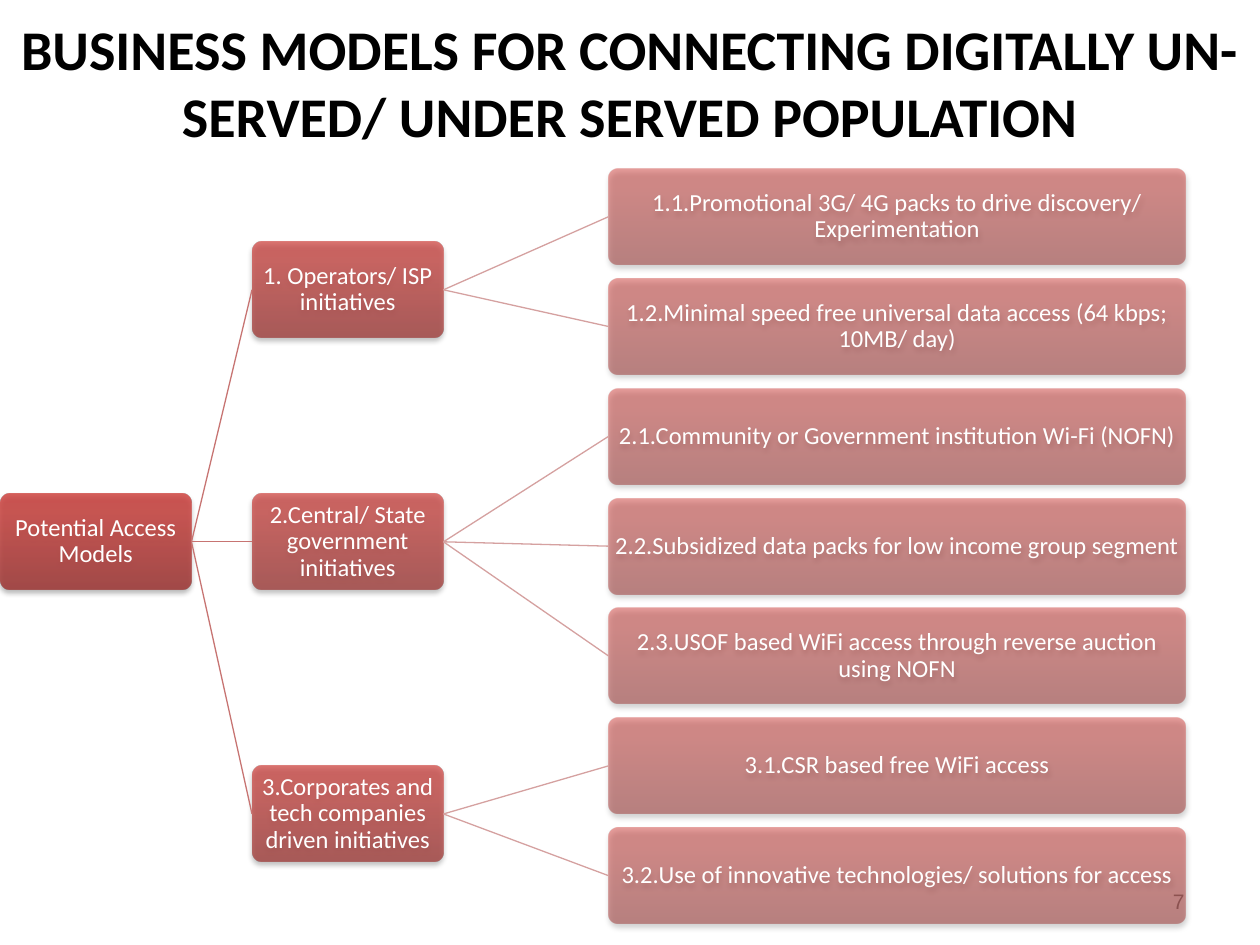
from lxml import etree
from pptx import Presentation
from pptx.dml.color import RGBColor
from pptx.enum.shapes import MSO_CONNECTOR, MSO_SHAPE
from pptx.enum.text import MSO_ANCHOR, PP_ALIGN
from pptx.oxml.ns import qn
from pptx.util import Inches, Pt

CENTER, RIGHT = PP_ALIGN.CENTER, PP_ALIGN.RIGHT
MIDDLE = MSO_ANCHOR.MIDDLE
ROUNDED = MSO_SHAPE.ROUNDED_RECTANGLE
STRAIGHT = MSO_CONNECTOR.STRAIGHT

BLACK = RGBColor(0x00, 0x00, 0x00)
WHITE = RGBColor(0xFF, 0xFF, 0xFF)
GREY = RGBColor(0x89, 0x89, 0x89)
DARK_RED = RGBColor(0x9C, 0x2F, 0x2D)
RED = RGBColor(0xCB, 0x3E, 0x3A)
BRIGHT_RED = RGBColor(0xCE, 0x3B, 0x37)
BRANCH_LINE = RGBColor(0xC7, 0x74, 0x72)
LEAF_LINE = RGBColor(0xD5, 0xA1, 0xA0)
GRADIENT = [(0, DARK_RED), (80, RED), (100, BRIGHT_RED)]

# Tree columns: left, width, opacity in percent
ROOT_COL = (0, 1.52, 80)
BRANCH_COL = (2, 1.52, 70)
LEAF_COL = (4.83, 4.58, 50)
BOX_H = 0.76
LEAF_TOP, LEAF_BOTTOM = 1.34, 6.57
ROOT_TOP = 3.92

# Branches: top, label, leaves
BRANCHES = [
    (1.92, "1. Operators/ ISP initiatives", [
        "1.1.Promotional 3G/ 4G packs to drive discovery/ Experimentation",
        "1.2.Minimal speed free universal data access (64 kbps; 10MB/ day)"]),
    (3.92, "2.Central/ State government initiatives", [
        "2.1.Community or Government institution Wi-Fi (NOFN)",
        "2.2.Subsidized data packs for low income group segment",
        "2.3.USOF based WiFi access through reverse auction using NOFN"]),
    (6.08, "3.Corporates and tech companies driven initiatives", [
        "3.1.CSR based free WiFi access",
        "3.2.Use of innovative technologies/ solutions for access"]),
]


def write(tf, text, size, color, align, font="Calibri", bold=False):
    tf.word_wrap = True
    tf.vertical_anchor = MIDDLE
    p = tf.paragraphs[0]
    p.text = text
    p.alignment = align
    p.font.name, p.font.size, p.font.bold = font, Pt(size), bold
    p.font.color.rgb = color
    return p


def add_text(slide, box, *args, **kwargs):
    tb = slide.shapes.add_textbox(*map(Inches, box))
    write(tb.text_frame, *args, **kwargs)


def add_color(parent, color, opacity):
    clr = etree.SubElement(parent, qn("a:srgbClr"), val=str(color))
    etree.SubElement(clr, qn("a:alpha"), val=str(opacity * 1000))


def shade(sp, opacity):
    """Translucent vertical gradient with a soft shadow below."""
    sp.fill.gradient()
    sp.fill.gradient_angle = 90
    sp.line.fill.background()
    sp.shadow.inherit = False
    stops = sp._element.spPr.find(".//" + qn("a:gsLst"))
    for gs in list(stops):
        stops.remove(gs)
    for pos, color in GRADIENT:
        gs = etree.SubElement(stops, qn("a:gs"), pos=str(pos * 1000))
        add_color(gs, color, opacity)
    effects = sp._element.spPr.find(qn("a:effectLst"))
    shadow = etree.SubElement(effects, qn("a:outerShdw"), blurRad=str(Pt(3.1)),
                              dist=str(Pt(1.8)), dir="5400000", rotWithShape="0")
    add_color(shadow, BLACK, 35)


def add_node(slide, col, top, text):
    left, width, opacity = col
    sp = slide.shapes.add_shape(ROUNDED, *map(Inches, (left, top, width, BOX_H)))
    sp.adjustments[0] = 0.1
    shade(sp, opacity)
    tf = sp.text_frame
    tf.margin_left = tf.margin_right = Inches(0.03)
    tf.margin_top = tf.margin_bottom = Inches(0.03)
    write(tf, text, 14, WHITE, CENTER).line_spacing = 0.9
    return sp


def link(slide, parent, child, color):
    line = slide.shapes.add_connector(STRAIGHT, 0, 0, 0, 0)
    line.begin_connect(parent, 3)
    line.end_connect(child, 1)
    line.line.color.rgb = color
    line.line.width = Pt(0.75)
    etree.SubElement(line._element.spPr, qn("a:effectLst"))


def add_tree(slide):
    root = add_node(slide, ROOT_COL, ROOT_TOP, "Potential Access Models")
    leaf_count = sum(len(leaves) for _, _, leaves in BRANCHES)
    step = (LEAF_BOTTOM - LEAF_TOP) / (leaf_count - 1)
    top = LEAF_TOP
    for branch_top, label, leaves in BRANCHES:
        branch = add_node(slide, BRANCH_COL, branch_top, label)
        link(slide, root, branch, BRANCH_LINE)
        for text in leaves:
            leaf = add_node(slide, LEAF_COL, top, text)
            link(slide, branch, leaf, LEAF_LINE)
            top += step


def main():
    prs = Presentation()
    prs.slide_width, prs.slide_height = Inches(10), Inches(7.5)
    slide = prs.slides.add_slide(prs.slide_layouts[6])

    # Title and page number
    add_text(slide, (0, 0.02, 10, 1.25),
             "BUSINESS MODELS FOR CONNECTING DIGITALLY UN-SERVED/ UNDER SERVED POPULATION",
             32, BLACK, CENTER, bold=True)
    add_text(slide, (7.17, 6.95, 2.33, 0.4), "7", 12, GREY, RIGHT, font="Arial")

    # Tree of access models
    add_tree(slide)
    prs.save("out.pptx")


if __name__ == "__main__":
    main()
